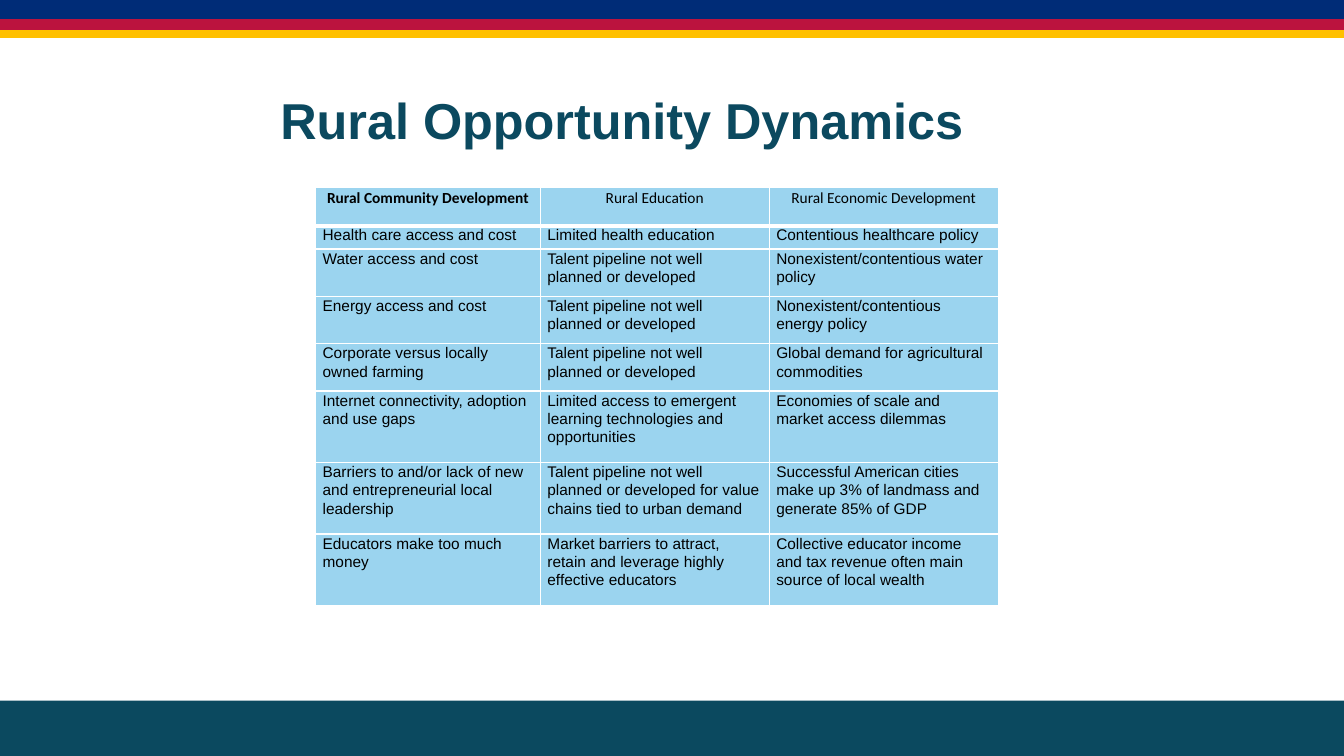
from lxml import etree
from pptx import Presentation
from pptx.dml.color import RGBColor
from pptx.enum.shapes import MSO_SHAPE
from pptx.enum.text import MSO_ANCHOR, PP_ALIGN
from pptx.oxml.ns import qn
from pptx.util import Inches, Pt


def paint(color_format, hex_color):
    color_format.rgb = RGBColor.from_string(hex_color)


def add_border(cell, position, side, width):
    line = etree.Element(qn(f"a:ln{side}"), w=str(Pt(width)))
    fill = etree.SubElement(line, qn("a:solidFill"))
    etree.SubElement(fill, qn("a:srgbClr"), val="FFFFFF")
    cell._tc.get_or_add_tcPr().insert(position, line)


prs = Presentation()
prs.slide_width = Inches(13.33)
prs.slide_height = Inches(7.5)
slide = prs.slides.add_slide(prs.slide_layouts[5])

bands = [
    (0, 6.95, 13.33, 0.55, "0B495F", 0),
    (0, 0, 13.33, 0.2, "002C77", 2),
    (0, 0.2, 13.33, 0.1, "BB133E", 2),
    (-0.01, 0.31, 13.34, 0.05, "FFC000", 2),
]
for left, top, width, height, color, outline in bands:
    band = slide.shapes.add_shape(
        MSO_SHAPE.RECTANGLE, Inches(left), Inches(top), Inches(width), Inches(height))
    band.shadow.inherit = False
    band.fill.solid()
    paint(band.fill.fore_color, color)
    if outline:
        paint(band.line.color, color)
        band.line.width = Pt(outline)
    else:
        band.line.fill.background()

title = slide.shapes.title
title.left, title.top = Inches(2.68), Inches(0.81)
title.width, title.height = Inches(7.98), Inches(0.75)
title.text_frame.text = "Rural Opportunity Dynamics"
title.text_frame.vertical_anchor = MSO_ANCHOR.MIDDLE
heading = title.text_frame.paragraphs[0]
heading.alignment = PP_ALIGN.LEFT
heading.font.name = "Arial"
heading.font.size = Pt(36)
heading.font.bold = True
paint(heading.font.color, "0B495F")

pipeline = "Talent pipeline not well planned or developed"
dynamics = [
    ("Rural Community Development", "Rural Education", "Rural Economic Development"),
    ("Health care access and cost", "Limited health education",
     "Contentious healthcare policy"),
    ("Water access and cost", pipeline, "Nonexistent/contentious water policy"),
    ("Energy access and cost", pipeline, "Nonexistent/contentious energy policy"),
    ("Corporate versus locally owned farming", pipeline,
     "Global demand for agricultural commodities"),
    ("Internet connectivity, adoption and use gaps",
     "Limited access to emergent learning technologies and opportunities",
     "Economies of scale and market access dilemmas"),
    ("Barriers to and/or lack of new and entrepreneurial local leadership",
     pipeline + " for value chains tied to urban demand",
     "Successful American cities make up 3% of landmass and generate 85% of GDP"),
    ("Educators make too much money",
     "Market barriers to attract, retain and leverage highly effective educators",
     "Collective educator income and tax revenue often main source of local wealth"),
]
column_widths = [2.23, 2.27, 2.27]
row_heights = [0.38, 0.23, 0.47, 0.47, 0.47, 0.71, 0.71, 0.71]
table = slide.shapes.add_table(
    len(row_heights), len(column_widths),
    Inches(3.13), Inches(1.86), Inches(6.78), Inches(4.17)).table
for column, width in zip(table.columns, column_widths):
    column.width = Inches(width)

for r, (height, topics) in enumerate(zip(row_heights, dynamics)):
    table.rows[r].height = Inches(height)
    is_header = r == 0
    for c, topic in enumerate(topics):
        cell = table.cell(r, c)
        cell.text = topic
        cell.margin_left = cell.margin_right = Inches(0.07)
        cell.margin_top = cell.margin_bottom = 0
        cell.fill.solid()
        paint(cell.fill.fore_color, "9BD4EF")
        for position, side in enumerate("LRTB"):
            add_border(cell, position, side, 3 if is_header and side == "B" else 1)
        entry = cell.text_frame.paragraphs[0]
        entry.alignment = PP_ALIGN.CENTER if is_header else PP_ALIGN.LEFT
        entry.line_spacing = 1.07
        entry.font.name = "Calibri" if is_header else "Arial"
        entry.font.size = Pt(11)
        entry.font.bold = is_header and c == 0
        paint(entry.font.color, "000000")

prs.save("out.pptx")
